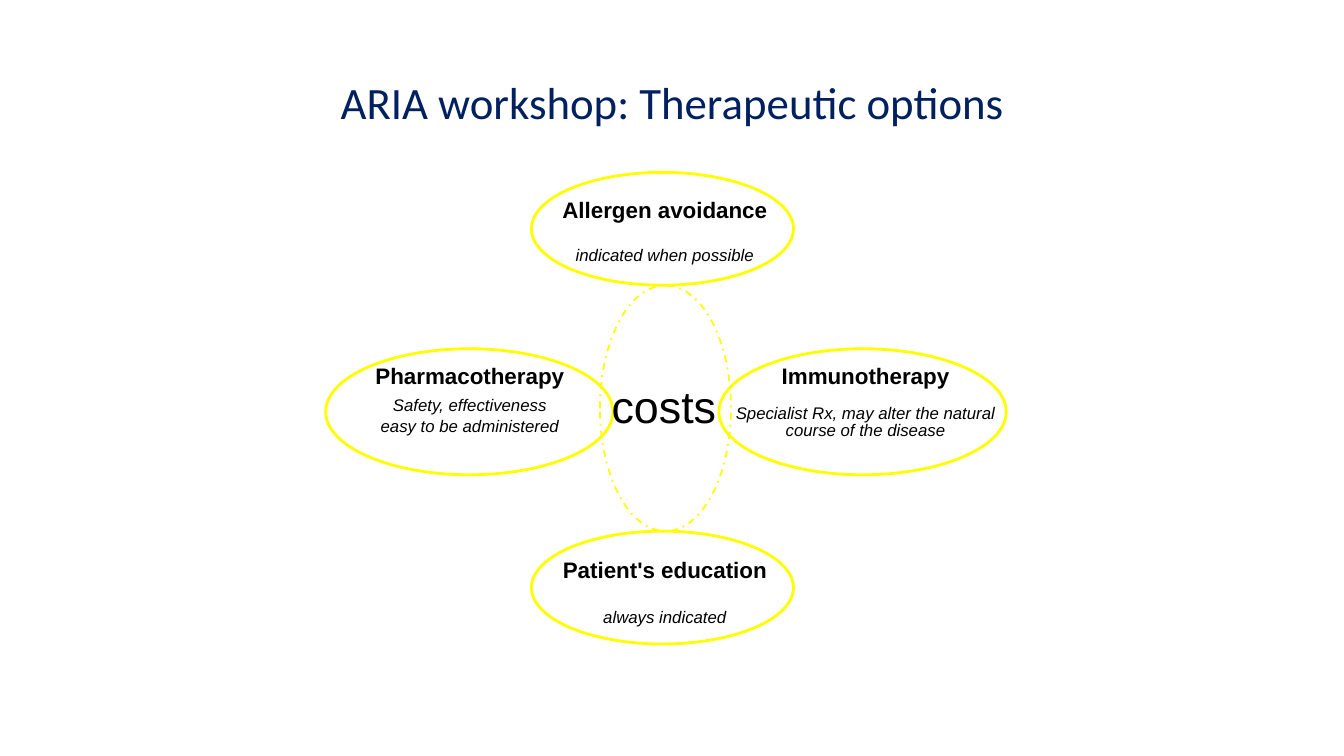
"""Draw the therapeutic options slide: four ringed options around their costs."""
from dataclasses import dataclass

from pptx import Presentation
from pptx import util as u
from pptx.dml.color import RGBColor
from pptx.enum import dml, shapes, text

WIDE, HIGH = u.Inches(13.33), u.Inches(7.5)
YELLOW, BLACK, NAVY = "FFFF00", "000000", "002060"


@dataclass(frozen=True)
class Box:
    """Centre and size in percent of the slide."""
    x: float
    y: float
    w: float
    h: float

    def place(self) -> tuple[int, int, int, int]:
        """Return left, top, width and height."""
        return (int(WIDE * (self.x - self.w / 2) / 100),
                int(HIGH * (self.y - self.h / 2) / 100),
                int(WIDE * self.w / 100), int(HIGH * self.h / 100))


@dataclass(frozen=True)
class Ring:
    """An outlined ellipse."""
    box: Box
    width: float = 2
    dash: dml.MSO_LINE | None = None


@dataclass(frozen=True)
class Line:
    """A paragraph; shift is a first-line indent in inches."""
    words: str
    size: float
    lead: float
    gap: float = 0
    bold: bool = False
    slant: bool = False
    shift: float = 0
    font: str = "Arial"
    ink: str = BLACK


@dataclass(frozen=True)
class Label:
    """A text box with its paragraphs."""
    box: Box
    lines: tuple[Line, ...]
    wrap: bool = False


def head(words: str, lead: float) -> Line:
    """Describe an option's name."""
    return Line(words, 16, lead, bold=True)


def note(words: str, lead: float, gap: float, shift: float = 0) -> Line:
    """Describe a remark below an option's name."""
    return Line(words, 12, lead, gap, slant=True, shift=shift)


TITLE = Label(Box(50.04, 12.33, 67.52, 16.67), (
    Line("ARIA workshop: Therapeutic options", 32, 1.3, font="Calibri", ink=NAVY),), True)
RINGS = (
    Ring(Box(49.51, 54, 9.75, 32.53), 1.25, dml.MSO_LINE.DASH_DOT),
    *(Ring(Box(49.29, y, 19.5, 14.93)) for y in (30.27, 77.73)),
    *(Ring(Box(x, 54.47, 21.38, 16.67)) for x in (34.92, 64.18)),
)
LABELS = (
    Label(Box(49.47, 30.47, 17.18, 10.27), (
        head("Allergen avoidance", 1.05),
        note("indicated when possible", 1.05, 15, -0.2)), True),
    Label(Box(34.96, 53.33, 15.3, 9.33), (
        head("Pharmacotherapy", 0.65),
        note("Safety, effectiveness", 0.55, 10),
        note("easy to be administered", 0.55, 7.4, -0.1))),
    Label(Box(49.47, 78.93, 16.43, 8.8), (
        head("Patient's education", 0.55),
        note("always indicated", 0.55, 24, -0.2))),
    Label(Box(49.4, 54.2, 8.93, 6.8), (Line("costs", 32, 0.85),)),
    Label(Box(64.4, 54.47, 20.93, 11.6), (
        head("Immunotherapy", 0.65),
        note("Specialist Rx, may alter the natural course of the disease", 0.85, 12.4)), True),
)


def tint(code: str) -> RGBColor:
    """Turn a hex string into a colour."""
    return RGBColor.from_string(code)


def write(frame, label: Label) -> None:
    """Fill a text frame run by run."""
    frame.word_wrap = label.wrap
    frame.auto_size = text.MSO_AUTO_SIZE.NONE
    for i, line in enumerate(label.lines):
        para = frame.add_paragraph() if i else frame.paragraphs[0]
        para.alignment = text.PP_ALIGN.CENTER
        para.line_spacing = line.lead
        para.space_before = u.Pt(line.gap)
        if line.shift:
            props = para._p.get_or_add_pPr()
            props.set("marL", "0")
            props.set("indent", str(int(u.Inches(line.shift))))
        run = para.add_run()
        run.text = line.words
        font = run.font
        font.name, font.size = line.font, u.Pt(line.size)
        font.bold, font.italic = line.bold, line.slant
        font.color.rgb = tint(line.ink)


def draw_ring(slide, ring: Ring) -> None:
    """Draw one ellipse."""
    oval = slide.shapes.add_shape(shapes.MSO_SHAPE.OVAL, *ring.box.place())
    oval.shadow.inherit = False
    oval.fill.background()
    oval.line.color.rgb = tint(YELLOW)
    oval.line.width = u.Pt(ring.width)
    if ring.dash is not None:
        oval.line.dash_style = ring.dash


def draw_label(slide, label: Label) -> None:
    """Draw one text box."""
    frame = slide.shapes.add_textbox(*label.box.place()).text_frame
    frame.margin_left = frame.margin_right = u.Inches(0.07)
    frame.margin_top = frame.margin_bottom = u.Inches(0.03)
    write(frame, label)


def draw_title(slide, label: Label) -> None:
    """Move and fill the title placeholder."""
    title = slide.shapes.title
    title.left, title.top, title.width, title.height = label.box.place()
    title.text_frame.vertical_anchor = text.MSO_ANCHOR.MIDDLE
    write(title.text_frame, label)


def main() -> None:
    """Build and save the slide."""
    deck = Presentation()
    deck.slide_width, deck.slide_height = WIDE, HIGH
    slide = deck.slides.add_slide(deck.slide_layouts[5])
    draw_title(slide, TITLE)
    for ring in RINGS:
        draw_ring(slide, ring)
    for label in LABELS:
        draw_label(slide, label)
    deck.save("out.pptx")


if __name__ == "__main__":
    main()
